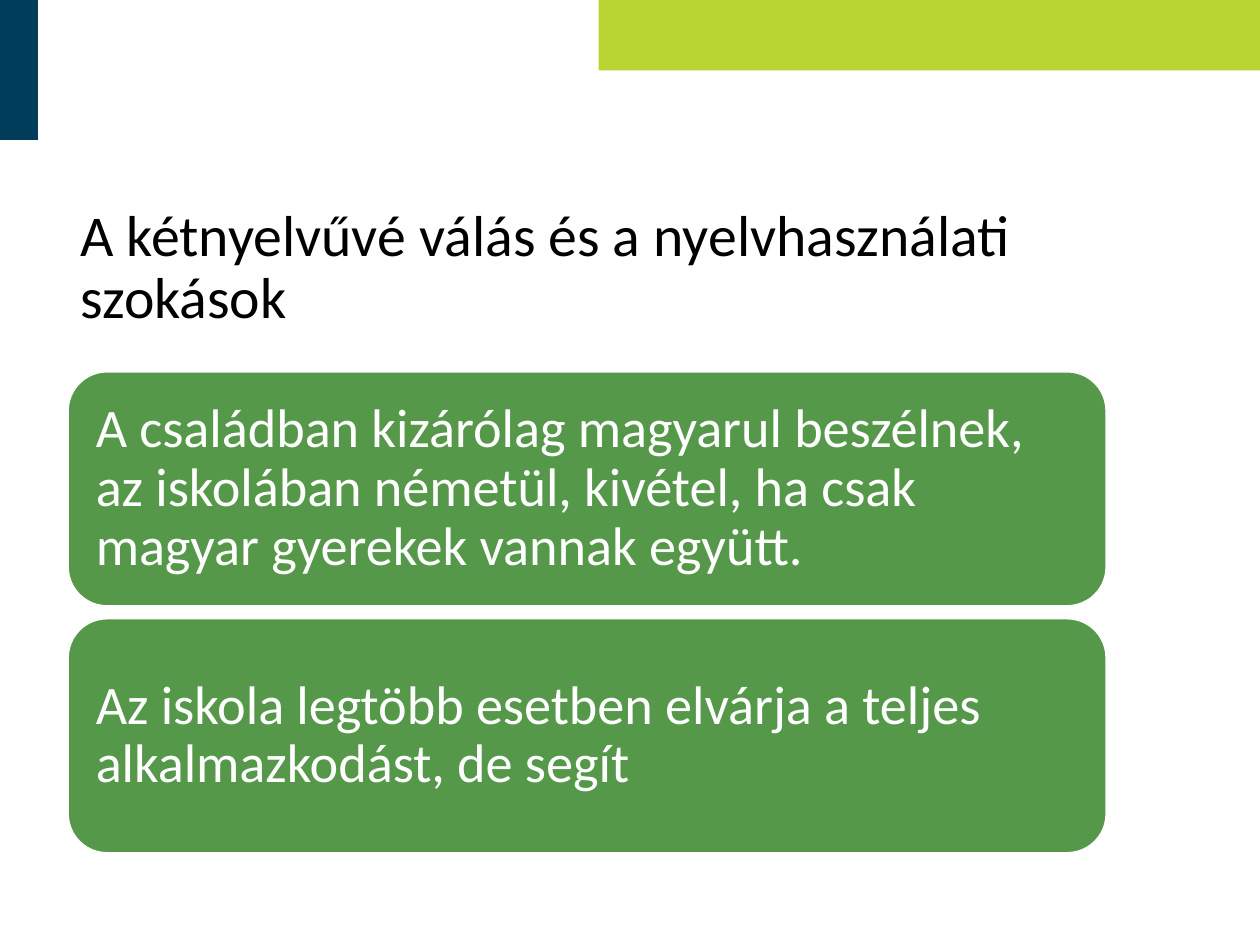
from dataclasses import dataclass

from pptx import Presentation
from pptx import util as u
from pptx.dml.color import RGBColor
from pptx.enum import shapes, text


@dataclass(frozen=True)
class Theme:
    """Colours, font and type sizes of the slide."""
    lime: str = "B9D531"
    navy: str = "003D5B"
    green: str = "55984A"
    white: str = "FFFFFF"
    black: str = "000000"
    font: str = "Calibri"
    title_size: int = 33
    card_size: int = 31


THEME = Theme()
LEFT, WIDTH = 0.54, 8.24
CARD_TOP, CARD_HEIGHT, CARD_STEP = 2.95, 1.86, 1.96
CARDS = (
    "A családban kizárólag magyarul beszélnek, az iskolában németül, "
    "kivétel, ha csak magyar gyerekek vannak együtt.",
    "Az iskola legtöbb esetben elvárja a teljes alkalmazkodást, de segít",
)


def write_text(shape, content, *, size, color, inset_x=0.1, inset_y=0.05):
    """Fill a shape with one left-aligned, vertically centred paragraph."""
    frame = shape.text_frame
    frame.word_wrap = True
    frame.vertical_anchor = text.MSO_ANCHOR.MIDDLE
    frame.margin_left = frame.margin_right = u.Inches(inset_x)
    frame.margin_top = frame.margin_bottom = u.Inches(inset_y)
    paragraph = frame.paragraphs[0]
    paragraph.text = content
    paragraph.alignment = text.PP_ALIGN.LEFT
    paragraph.line_spacing = 0.9
    paragraph.font.name = THEME.font
    paragraph.font.size = u.Pt(size)
    paragraph.font.color.rgb = RGBColor.from_string(color)


def add_block(slide, kind, box, fill, line=None):
    """Add a filled preset shape, outlined only when a line colour is given."""
    shape = slide.shapes.add_shape(kind, *map(u.Inches, box))
    shape.shadow.inherit = False
    shape.fill.solid()
    shape.fill.fore_color.rgb = RGBColor.from_string(fill)
    if line:
        shape.line.color.rgb = RGBColor.from_string(line)
        shape.line.width = u.Pt(1)
    else:
        shape.line.fill.background()
    return shape


def add_title(slide, content):
    """Add the slide heading."""
    title = slide.shapes.add_textbox(*map(u.Inches, (LEFT, 1.41, WIDTH, 1.45)))
    write_text(title, content, size=THEME.title_size, color=THEME.black)


def add_card(slide, index, content):
    """Add one rounded statement card at its place in the stack."""
    box = (LEFT, CARD_TOP + index * CARD_STEP, WIDTH, CARD_HEIGHT)
    card = add_block(slide, shapes.MSO_SHAPE.ROUNDED_RECTANGLE, box,
                     THEME.green, THEME.white)
    write_text(card, content, size=THEME.card_size, color=THEME.white,
               inset_x=0.13, inset_y=0.13)


def main():
    """Build and save the presentation."""
    presentation = Presentation()
    presentation.slide_width = u.Inches(10)
    presentation.slide_height = u.Inches(7.5)
    slide = presentation.slides.add_slide(presentation.slide_layouts[6])
    rectangle = shapes.MSO_SHAPE.RECTANGLE
    add_block(slide, rectangle, (4.75, 0, 5.25, 0.56), THEME.lime)
    add_block(slide, rectangle, (-0.01, 0, 0.31, 1.11), THEME.navy)
    add_title(slide, "A kétnyelvűvé válás és a nyelvhasználati szokások")
    for index, content in enumerate(CARDS):
        add_card(slide, index, content)
    presentation.save("out.pptx")


if __name__ == "__main__":
    main()
